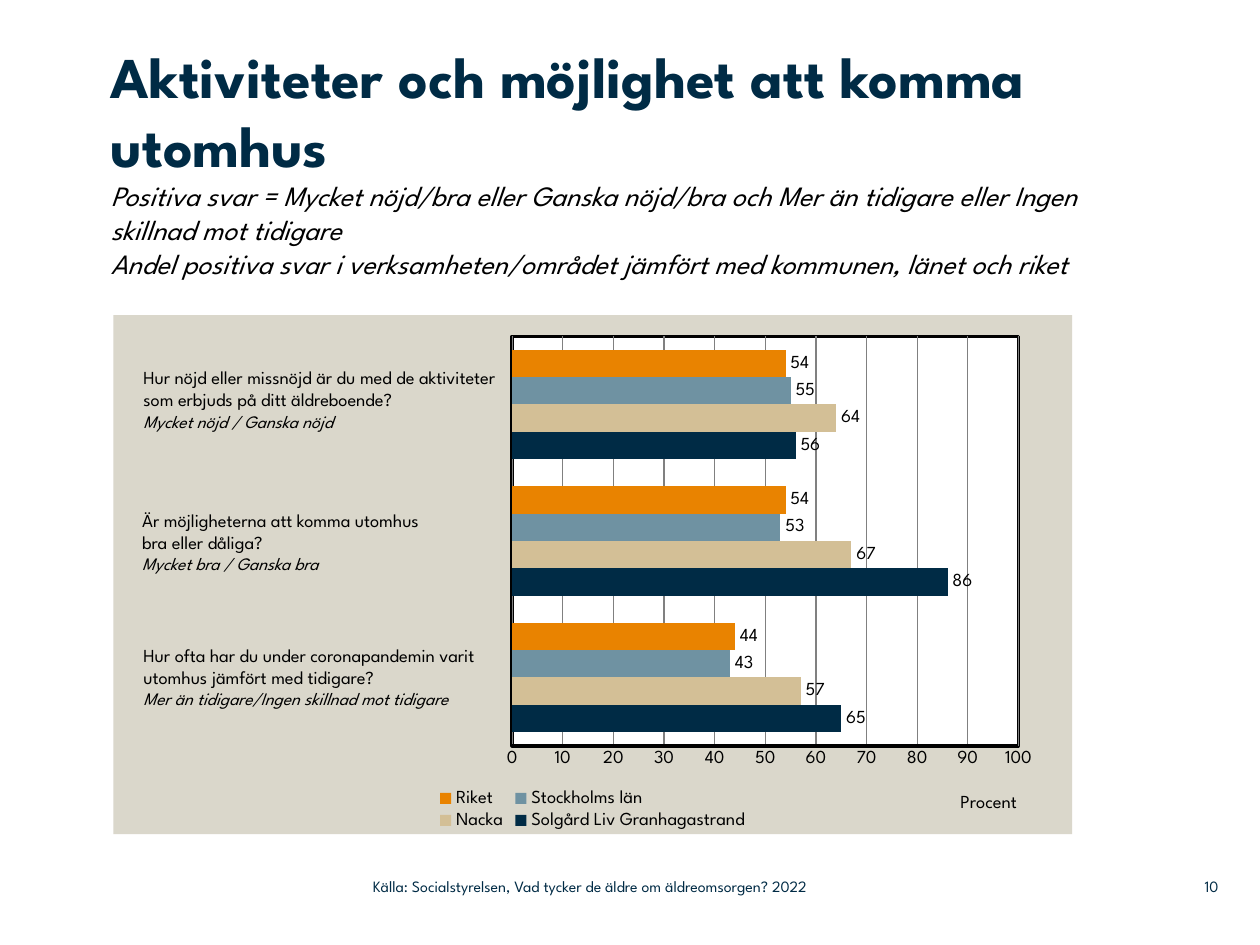
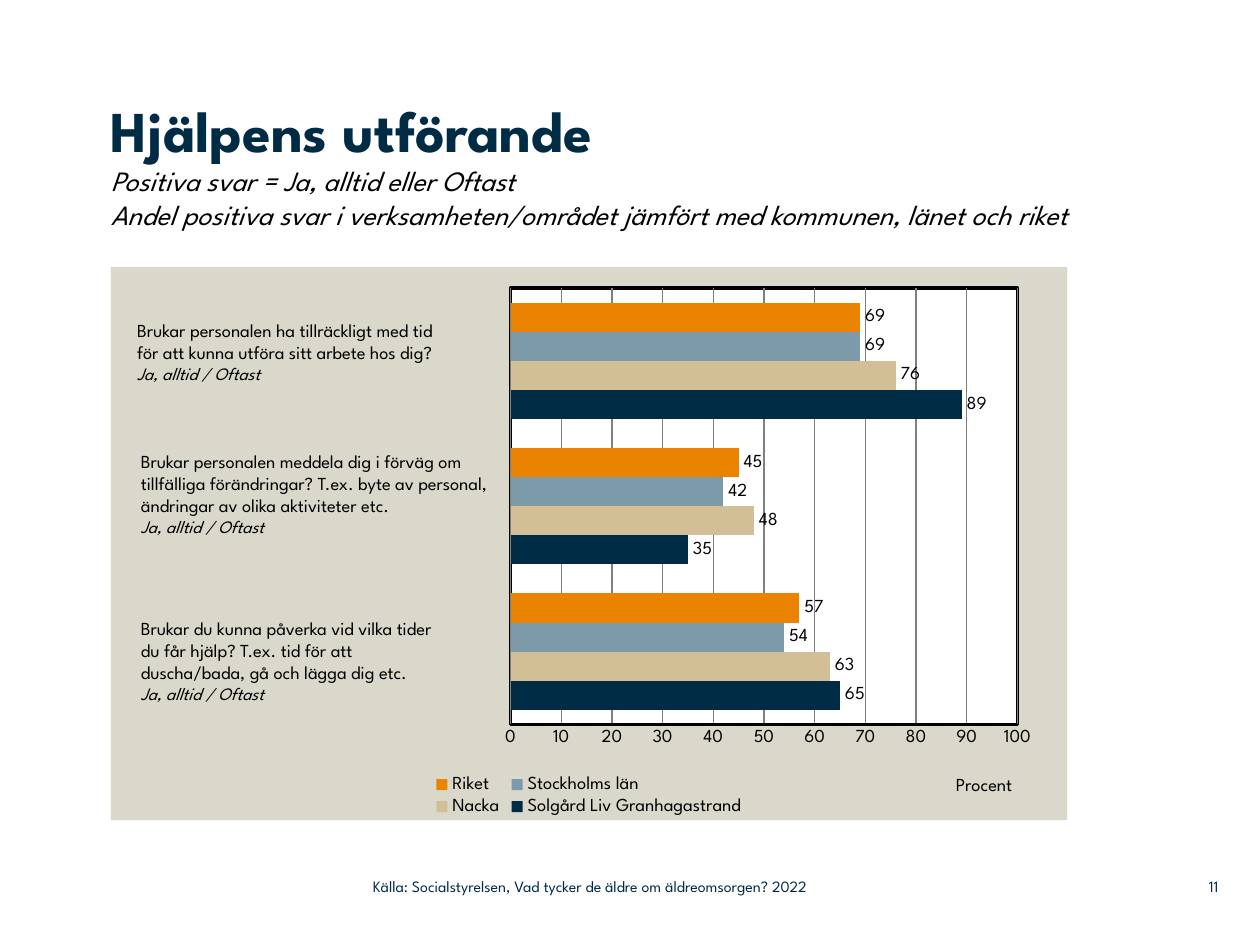
import pptx
import pptx.chart.data
import pptx.dml.color
import pptx.enum.chart
import pptx.enum.text
import pptx.oxml
import pptx.oxml.ns
import pptx.util
from pptx.util import Inches

FONT = "League Spartan"
NAVY, BLACK, WHITE, PANEL, GRID = "002B45", "000000", "FFFFFF", "DAD7CB", "808080"
SAND, ORANGE = "D3BF96", "E98300"
BODY_SIZE = 10.5
SOURCE = "Källa: Socialstyrelsen, Vad tycker de äldre om äldreomsorgen? 2022"
COMPARISON = "Andel positiva svar i verksamheten/området jämfört med kommunen, länet och riket"
SERIES_NAMES = ("Solgård Liv Granhagastrand", "Nacka", "Stockholms län", "Riket")

SLIDES = [
    {
        "number": 10,
        "title": "Aktiviteter och möjlighet att komma utomhus",
        "title_box": (0.88, 0.32, 7.8, 1.89),
        "positive": "Positiva svar = Mycket nöjd/bra eller Ganska nöjd/bra och "
                    "Mer än tidigare eller Ingen skillnad mot tidigare",
        "chart_box": (0.9, 2.5, 7.61, 4.12),
        "plot": (0.416, 0.041, 0.528, 0.789),
        "county_color": "6F92A2",
        "values": [(65, 86, 56), (57, 67, 64), (43, 53, 55), (44, 54, 54)],
        "questions": [
            ((1.04, 2.86, 3, 0.98),
             ["Hur nöjd eller missnöjd är du med de aktiviteter som erbjuds på ditt äldreboende?"],
             "Mycket nöjd / Ganska nöjd"),
            ((1.03, 3.99, 3.01, 0.81),
             ["Är möjligheterna att komma utomhus", "bra eller dåliga?"],
             "Mycket bra / Ganska bra"),
            ((1.04, 5.06, 3.01, 0.79),
             ["Hur ofta har du under coronapandemin varit utomhus jämfört med tidigare?"],
             "Mer än tidigare/Ingen skillnad mot tidigare"),
        ],
    },
    {
        "number": 11,
        "title": "Hjälpens utförande",
        "title_box": (0.88, 0.75, 7.79, 1.21),
        "positive": "Positiva svar = Ja, alltid eller Oftast",
        "chart_box": (0.88, 2.12, 7.59, 4.39),
        "plot": (0.418, 0.038, 0.53, 0.789),
        "county_color": "7D9AAA",
        "values": [(65, 35, 89), (63, 48, 76), (54, 42, 69), (57, 45, 69)],
        "questions": [
            ((0.99, 2.48, 2.97, 0.81),
             ["Brukar personalen ha tillräckligt med tid",
              "för att kunna utföra sitt arbete hos dig?"],
             "Ja, alltid / Oftast"),
            ((1.02, 3.52, 2.99, 0.98),
             ["Brukar personalen meddela dig i förväg om tillfälliga förändringar? "
              "T.ex. byte av personal, ändringar av olika aktiviteter etc."],
             "Ja, alltid / Oftast"),
            ((1.02, 4.85, 2.97, 0.81),
             ["Brukar du kunna påverka vid vilka tider", "du får hjälp? T.ex. tid för att",
              "duscha/bada, gå och lägga dig etc."],
             "Ja, alltid / Oftast"),
        ],
    },
]


def rgb(color):
    return pptx.dml.color.RGBColor.from_string(color)


def set_font(font, size, color=BLACK, bold=False, italic=False):
    font.name = FONT
    font.size = pptx.util.Pt(size)
    font.bold = bold
    font.italic = italic
    font.color.rgb = rgb(color)


def chart_fill(color, line="<a:ln><a:noFill/></a:ln>"):
    return pptx.oxml.parse_xml(
        f'<c:spPr {pptx.oxml.ns.nsdecls("c", "a")}><a:solidFill><a:srgbClr val="{color}"/>'
        f'</a:solidFill>{line}</c:spPr>')


def place(parent, index, target="", **fractions):
    """Give a chart part a manual layout in fractions of the chart."""
    for layout in parent.findall(pptx.oxml.ns.qn("c:layout")):
        parent.remove(layout)
    modes = "".join(f'<c:{side}Mode val="edge"/>' for side in "xy")
    sizes = "".join(f'<c:{key} val="{value}"/>' for key, value in fractions.items())
    parent.insert(index, pptx.oxml.parse_xml(
        f'<c:layout {pptx.oxml.ns.nsdecls("c")}><c:manualLayout>{target}{modes}{sizes}'
        f'</c:manualLayout></c:layout>'))


class SurveyDeck:
    def __init__(self):
        self.presentation = pptx.Presentation()
        self.presentation.slide_width = Inches(10)
        self.presentation.slide_height = Inches(7.5)
        self.slide = None

    def add_slide(self, number):
        self.slide = self.presentation.slides.add_slide(self.presentation.slide_layouts[6])
        self.footer((2.96, 6.89, 4.43, 0.29), SOURCE, pptx.enum.text.PP_ALIGN.LEFT)
        self.footer((9.2, 6.89, 0.47, 0.29), str(number), pptx.enum.text.PP_ALIGN.RIGHT)

    def text_frame(self, box, margins=True):
        frame = self.slide.shapes.add_textbox(*map(Inches, box)).text_frame
        frame.word_wrap = True
        if not margins:
            frame.margin_left = frame.margin_right = 0
            frame.margin_top = frame.margin_bottom = 0
        return frame

    def footer(self, box, text, alignment):
        frame = self.text_frame(box, margins=False)
        frame.vertical_anchor = pptx.enum.text.MSO_ANCHOR.MIDDLE
        paragraph = frame.paragraphs[0]
        paragraph.text = text
        paragraph.alignment = alignment
        set_font(paragraph.font, 9, NAVY)

    def title(self, box, title, subtitles):
        paragraph = self.text_frame(box, margins=False).paragraphs[0]
        run = paragraph.add_run()
        run.text = title
        set_font(run.font, 33, NAVY, bold=True)
        for subtitle in subtitles:
            paragraph.add_line_break()
            run = paragraph.add_run()
            run.text = subtitle
            set_font(run.font, 16, italic=True)

    def question(self, box, lines, answer):
        frame = self.text_frame(box)
        for index, line in enumerate(lines + [answer]):
            paragraph = frame.add_paragraph() if index else frame.paragraphs[0]
            paragraph.text = line
            is_answer = index == len(lines)
            set_font(paragraph.font, 10 if is_answer else BODY_SIZE, italic=is_answer)

    def bar_chart(self, box, plot_box, values, colors):
        data = pptx.chart.data.CategoryChartData()
        data.categories = ["1", "2", "3"]
        for name, series_values in zip(SERIES_NAMES, values):
            data.add_series(name, series_values)
        chart = self.slide.shapes.add_chart(
            pptx.enum.chart.XL_CHART_TYPE.BAR_CLUSTERED, *map(Inches, box), data).chart
        set_font(chart.font, BODY_SIZE)
        chart.has_title = False
        chart.has_legend = True
        chart.legend.position = pptx.enum.chart.XL_LEGEND_POSITION.BOTTOM
        chart.legend.include_in_layout = False
        set_font(chart.legend.font, BODY_SIZE)
        self.bars(chart.plots[0], colors)
        chart.category_axis.visible = False
        self.percent_axis(chart.value_axis)

        chart_element = chart.element.find(pptx.oxml.ns.qn("c:chart"))
        chart_element.addnext(chart_fill(PANEL))
        plot_area = chart_element.find(pptx.oxml.ns.qn("c:plotArea"))
        plot_area.append(chart_fill(
            WHITE, f'<a:ln w="25400"><a:solidFill><a:srgbClr val="{BLACK}"/></a:solidFill></a:ln>'))
        place(plot_area, 0, '<c:layoutTarget val="inner"/>', **dict(zip("xywh", plot_box)))

    def bars(self, plot, colors):
        plot.gap_width = 100
        plot.overlap = 0
        plot.vary_by_categories = False
        for series, color in zip(plot.series, colors):
            series.format.fill.solid()
            series.format.fill.fore_color.rgb = rgb(color)
            labels = series.data_labels
            labels.show_value = True
            labels.position = pptx.enum.chart.XL_LABEL_POSITION.OUTSIDE_END
            set_font(labels.font, BODY_SIZE)

    def percent_axis(self, axis):
        axis.minimum_scale, axis.maximum_scale, axis.major_unit = 0, 100, 10
        axis.major_tick_mark = pptx.enum.chart.XL_TICK_MARK.NONE
        axis.has_major_gridlines = True
        for line, color, width in ((axis.major_gridlines.format.line, GRID, 0.75),
                                   (axis.format.line, BLACK, 2)):
            line.color.rgb = rgb(color)
            line.width = pptx.util.Pt(width)
        set_font(axis.tick_labels.font, BODY_SIZE)
        paragraph = axis.axis_title.text_frame.paragraphs[0]
        paragraph.text = "Procent"
        set_font(paragraph.font, BODY_SIZE)
        place(axis.axis_title._element, 1, x=0.88, y=0.915)


def main():
    deck = SurveyDeck()
    for content in SLIDES:
        deck.add_slide(content["number"])
        deck.title(content["title_box"], content["title"], [content["positive"], COMPARISON])
        deck.bar_chart(content["chart_box"], content["plot"], content["values"],
                       (NAVY, SAND, content["county_color"], ORANGE))
        for box, lines, answer in content["questions"]:
            deck.question(box, lines, answer)
    deck.presentation.save("out.pptx")


if __name__ == "__main__":
    main()
